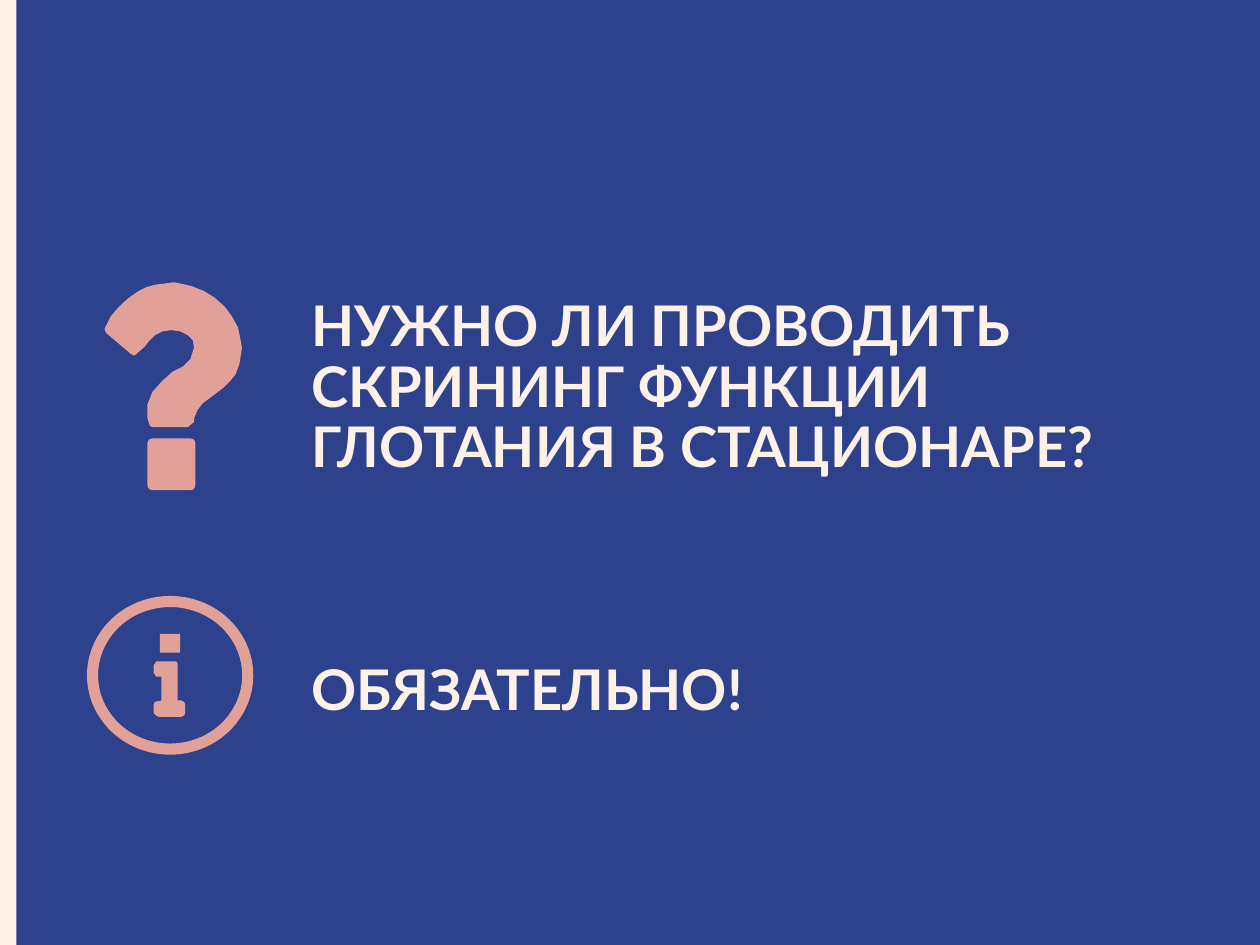
from dataclasses import dataclass

import pptx
import pptx.dml.color
import pptx.enum.shapes
import pptx.enum.text
import pptx.util

Inches = pptx.util.Inches
Pt = pptx.util.Pt
Preset = pptx.enum.shapes.MSO_SHAPE

CREAM = "FEF1E8"
BLUE = "2E418D"
PINK = "E1A198"
SLIDE_WIDTH, SLIDE_HEIGHT = 10, 7.5
STRIPE_WIDTH = 0.13
FONT_SIZE = 32
LINE_SPACING = 0.9


@dataclass(frozen=True)
class PresetPart:
    kind: Preset
    left: float
    top: float
    width: float
    height: float
    adjustment: float | None = None


@dataclass(frozen=True)
class OutlinePart:
    points: tuple[tuple[float, float], ...]


QUESTION_ICON = (
    PresetPart(Preset.ROUNDED_RECTANGLE, 1.17, 3.48, 0.38, 0.41, 0.1),
    OutlinePart((
        (1.36, 2.62), (1.43, 2.63), (1.49, 2.66), (1.53, 2.7), (1.54, 2.76),
        (1.51, 2.85), (1.45, 2.91), (1.37, 2.95), (1.29, 3.02), (1.21, 3.11),
        (1.17, 3.21), (1.17, 3.32), (1.19, 3.38), (1.21, 3.39), (1.49, 3.39),
        (1.54, 3.35), (1.54, 3.32), (1.57, 3.25), (1.61, 3.2), (1.69, 3.14),
        (1.77, 3.08), (1.83, 3.02), (1.87, 2.97), (1.9, 2.89), (1.92, 2.76),
        (1.91, 2.7), (1.89, 2.6), (1.84, 2.51), (1.78, 2.43), (1.7, 2.36),
        (1.62, 2.31), (1.52, 2.27), (1.43, 2.25), (1.38, 2.24), (1.31, 2.25),
        (1.23, 2.26), (1.16, 2.28), (1.1, 2.31), (1.04, 2.35), (0.98, 2.4),
        (0.93, 2.45), (0.88, 2.51), (0.84, 2.59), (0.83, 2.61), (0.84, 2.64),
        (1.04, 2.81), (1.06, 2.82), (1.07, 2.82), (1.15, 2.75), (1.18, 2.71),
        (1.23, 2.66), (1.29, 2.63),
    )),
)
INFO_ICON = (
    PresetPart(Preset.RECTANGLE, 1.27, 5.03, 0.16, 0.15),
    OutlinePart((
        (1.38, 5.25), (1.24, 5.25), (1.22, 5.28), (1.22, 5.34), (1.24, 5.37),
        (1.28, 5.37), (1.28, 5.56), (1.23, 5.57), (1.22, 5.59), (1.22, 5.66),
        (1.24, 5.68), (1.26, 5.69), (1.44, 5.69), (1.46, 5.68), (1.47, 5.66),
        (1.47, 5.59), (1.46, 5.57), (1.44, 5.56), (1.41, 5.56), (1.41, 5.27),
        (1.4, 5.25),
    )),
    PresetPart(Preset.DONUT, 0.69, 4.73, 1.32, 1.26, 0.07),
)


def color(hex_value: str) -> pptx.dml.color.RGBColor:
    return pptx.dml.color.RGBColor.from_string(hex_value)


def set_attributes(target, values: dict) -> None:
    for name, value in values.items():
        setattr(target, name, value)


def paint(shape, hex_value: str) -> None:
    """Give the shape a plain fill without line or shadow."""
    shape.fill.solid()
    shape.fill.fore_color.rgb = color(hex_value)
    shape.line.fill.background()
    shape.shadow.inherit = False


def add_part(shapes, part: PresetPart | OutlinePart, hex_value: str):
    if isinstance(part, OutlinePart):
        start, *others = [(Inches(x), Inches(y)) for x, y in part.points]
        builder = shapes.build_freeform(*start)
        builder.add_line_segments(others, close=True)
        shape = builder.convert_to_shape()
    else:
        box = (part.left, part.top, part.width, part.height)
        shape = shapes.add_shape(part.kind, *map(Inches, box))
        if part.adjustment is not None:
            shape.adjustments[0] = part.adjustment
    paint(shape, hex_value)
    return shape


def fill_title(title) -> None:
    set_attributes(title, {
        "left": Inches(2.37), "top": Inches(1.67),
        "width": Inches(7.17), "height": Inches(4.76),
    })
    frame = title.text_frame
    frame.text = "НУЖНО ЛИ ПРОВОДИТЬ СКРИНИНГ ФУНКЦИИ ГЛОТАНИЯ В СТАЦИОНАРЕ?\nОБЯЗАТЕЛЬНО!"
    set_attributes(frame, {
        "word_wrap": True,
        "auto_size": pptx.enum.text.MSO_AUTO_SIZE.NONE,
        "vertical_anchor": pptx.enum.text.MSO_ANCHOR.MIDDLE,
    })
    for paragraph in frame.paragraphs:
        set_attributes(paragraph, {
            "alignment": pptx.enum.text.PP_ALIGN.LEFT,
            "line_spacing": LINE_SPACING,
            "space_before": Pt(0),
        })
        font = paragraph.runs[0].font
        set_attributes(font, {"name": "Lato", "size": Pt(FONT_SIZE), "bold": True})
        font.color.rgb = color(CREAM)
    # The answer stands three line heights (1.2 em each) below the question.
    frame.paragraphs[1].space_before = Pt(round(3 * 1.2 * LINE_SPACING * FONT_SIZE))


def main() -> None:
    presentation = pptx.Presentation()
    presentation.slide_width = Inches(SLIDE_WIDTH)
    presentation.slide_height = Inches(SLIDE_HEIGHT)
    slide = presentation.slides.add_slide(presentation.slide_layouts[5])
    slide.background.fill.solid()
    slide.background.fill.fore_color.rgb = color(CREAM)

    title = slide.shapes.title
    fill_title(title)
    panel = add_part(
        slide.shapes,
        PresetPart(Preset.RECTANGLE, STRIPE_WIDTH, 0,
                   SLIDE_WIDTH - STRIPE_WIDTH, SLIDE_HEIGHT),
        BLUE,
    )
    title.element.addprevious(panel.element)

    for icon in (QUESTION_ICON, INFO_ICON):
        group = slide.shapes.add_group_shape()
        for part in icon:
            add_part(group.shapes, part, PINK)

    presentation.save("out.pptx")


if __name__ == "__main__":
    main()
